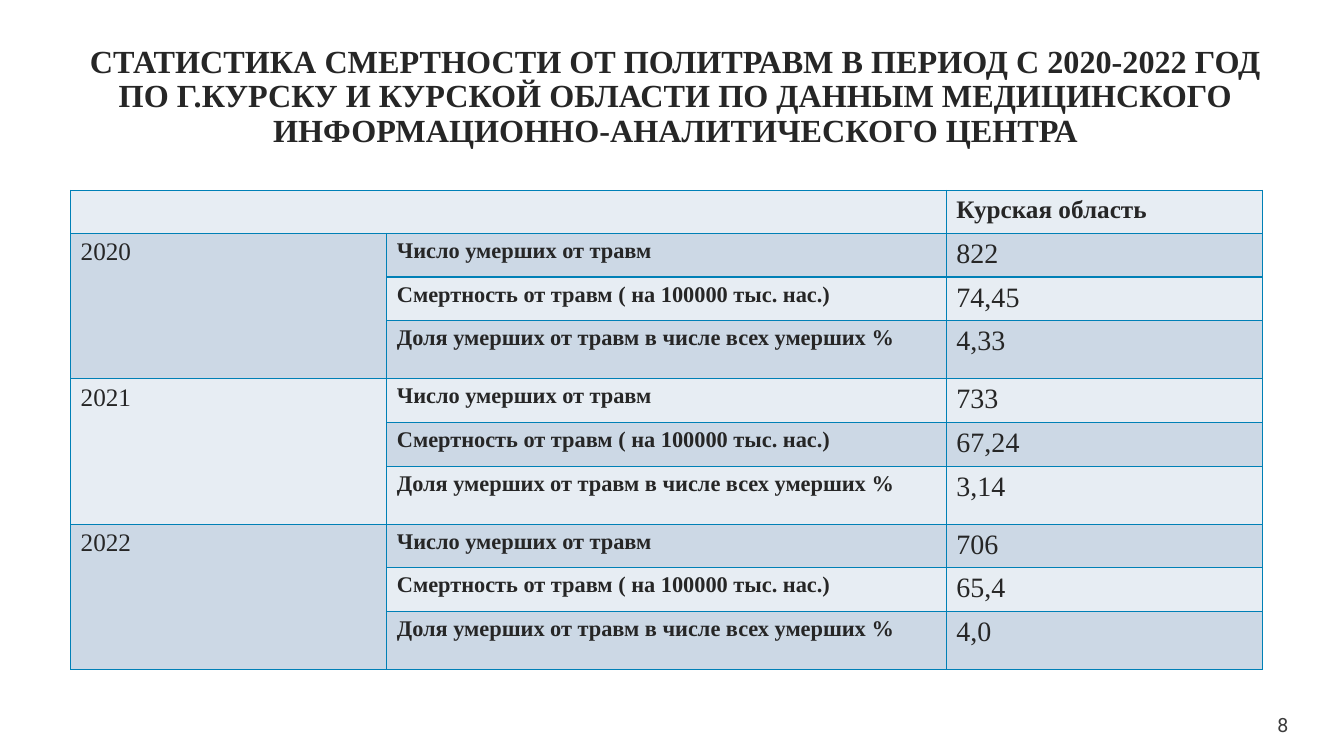
from dataclasses import dataclass

from lxml import etree
from pptx import Presentation, util as u
from pptx.dml.color import RGBColor
from pptx.enum import text
from pptx.oxml import ns


@dataclass(frozen=True)
class Theme:
    serif: str = "Times New Roman"
    sans: str = "Roboto"
    ink: str = "262626"
    page_ink: str = "3C3C3C"
    border: str = "0080B6"
    light: str = "E7EDF3"
    dark: str = "CCD8E5"
    title_size: int = 23
    head_size: int = 18
    label_size: int = 16
    value_size: int = 20
    page_size: int = 14


class SlideBuilder:
    def __init__(self, slide, theme):
        self.slide = slide
        self.theme = theme

    def set_text(self, frame, words, size, bold=False, align=text.PP_ALIGN.LEFT,
                 face=None, color=None):
        paragraph = frame.paragraphs[0]
        paragraph.text = words
        paragraph.alignment = align
        font = paragraph.font
        font.name = face or self.theme.serif
        font.size = u.Pt(size)
        font.bold = bold
        font.color.rgb = RGBColor.from_string(color or self.theme.ink)
        return paragraph

    def text_box(self, left, top, width, height):
        box = self.slide.shapes.add_textbox(*map(u.Cm, (left, top, width, height)))
        box.text_frame.word_wrap = True
        return box.text_frame

    def title(self, words):
        frame = self.text_box(1.47, 1.02, 31.14, 2.57)
        heading = self.set_text(frame, words, self.theme.title_size, bold=True,
                                align=text.PP_ALIGN.CENTER)
        heading.line_spacing = 0.9

    def page_number(self, number):
        frame = self.text_box(31.83, 17.96, 0.64, 0.61)
        frame.margin_left = frame.margin_right = 0
        frame.margin_top = frame.margin_bottom = 0
        frame.vertical_anchor = text.MSO_ANCHOR.MIDDLE
        self.set_text(frame, number, self.theme.page_size, align=text.PP_ALIGN.RIGHT,
                      face=self.theme.sans, color=self.theme.page_ink)

    def grid(self, left, top, widths, heights):
        """Add a table whose rows alternate between the two fills."""
        frame = self.slide.shapes.add_table(
            len(heights), len(widths), u.Cm(left), u.Cm(top),
            u.Cm(sum(widths)), u.Cm(sum(heights)))
        table = frame.table
        table.first_row = table.horz_banding = False
        for column, width in zip(table.columns, widths):
            column.width = u.Cm(width)
        for index, (row, height) in enumerate(zip(table.rows, heights)):
            row.height = u.Cm(height)
            for cell in row.cells:
                self.style_cell(cell, self.theme.dark if index % 2 else self.theme.light)
        return table

    def style_cell(self, cell, fill):
        properties = cell._tc.get_or_add_tcPr()
        for side in ("a:lnL", "a:lnR", "a:lnT", "a:lnB"):
            line = etree.SubElement(properties, ns.qn(side), w=str(u.Pt(1)))
            solid = etree.SubElement(line, ns.qn("a:solidFill"))
            etree.SubElement(solid, ns.qn("a:srgbClr"), val=self.theme.border)
        cell.fill.solid()
        cell.fill.fore_color.rgb = RGBColor.from_string(fill)


TITLE = ("СТАТИСТИКА СМЕРТНОСТИ ОТ ПОЛИТРАВМ В ПЕРИОД С 2020-2022 ГОД "
         "ПО Г.КУРСКУ И КУРСКОЙ ОБЛАСТИ ПО ДАННЫМ МЕДИЦИНСКОГО "
         "ИНФОРМАЦИОННО-АНАЛИТИЧЕСКОГО ЦЕНТРА")
INDICATORS = ("Число умерших от травм",
              "Смертность от травм ( на 100000 тыс. нас.)",
              "Доля умерших от травм в числе всех умерших %")
MORTALITY = {"2020": ("822", "74,45", "4,33"),
             "2021": ("733", "67,24", "3,14"),
             "2022": ("706", "65,4", "4,0")}


def add_mortality_table(builder):
    theme = builder.theme
    heights = [1.08] + [1.08, 1.08, 1.46] * len(MORTALITY)
    table = builder.grid(1.78, 4.8, [7.97, 14.1, 7.97], heights)
    table.cell(0, 0).merge(table.cell(0, 1))
    builder.set_text(table.cell(0, 2).text_frame, "Курская область",
                     theme.head_size, bold=True)
    for block, (year, values) in enumerate(MORTALITY.items()):
        first = 1 + block * len(INDICATORS)
        year_cell = table.cell(first, 0)
        year_cell.merge(table.cell(first + len(INDICATORS) - 1, 0))
        builder.set_text(year_cell.text_frame, year, theme.head_size)
        for row, (indicator, value) in enumerate(zip(INDICATORS, values), first):
            builder.set_text(table.cell(row, 1).text_frame, indicator, theme.label_size,
                             bold=True, align=text.PP_ALIGN.JUSTIFY)
            builder.set_text(table.cell(row, 2).text_frame, value, theme.value_size)


def main():
    deck = Presentation()
    deck.slide_width, deck.slide_height = u.Cm(33.87), u.Cm(19.05)
    builder = SlideBuilder(deck.slides.add_slide(deck.slide_layouts[6]), Theme())
    builder.page_number("8")
    builder.title(TITLE)
    add_mortality_table(builder)
    deck.save("out.pptx")


if __name__ == "__main__":
    main()
